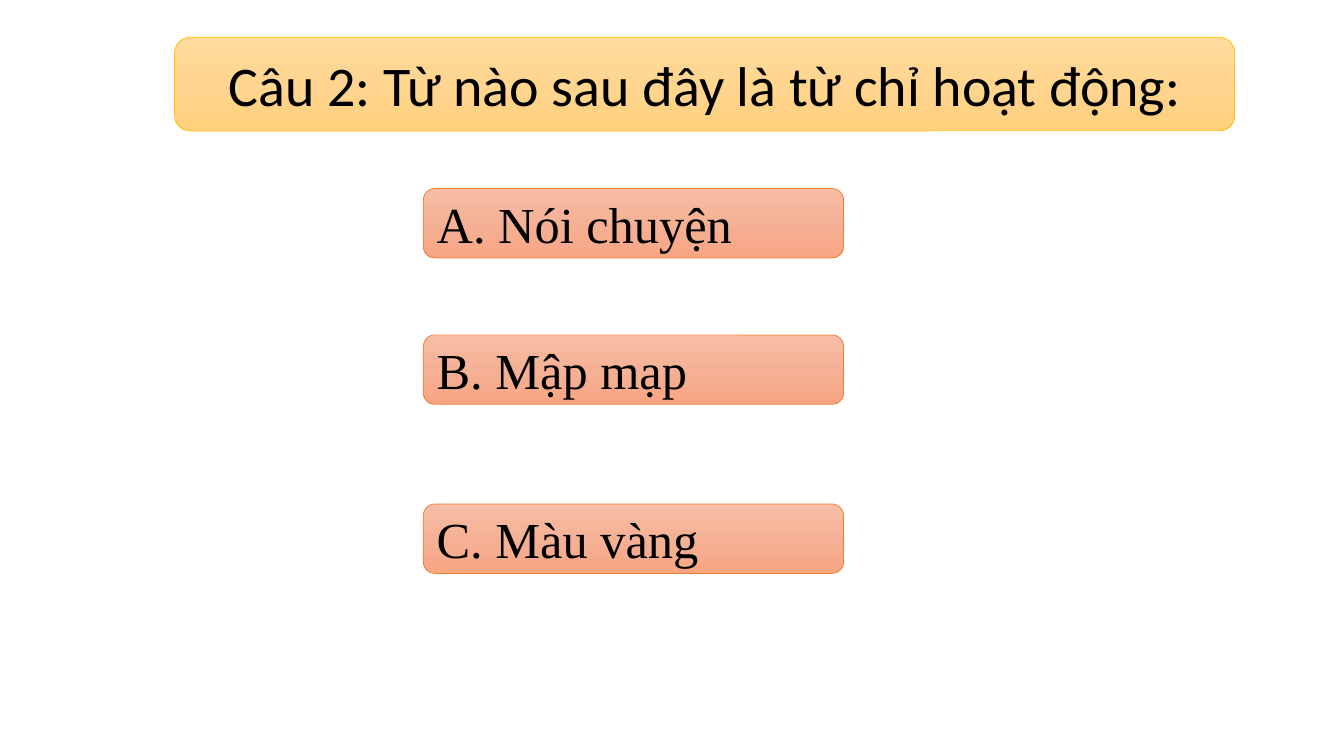
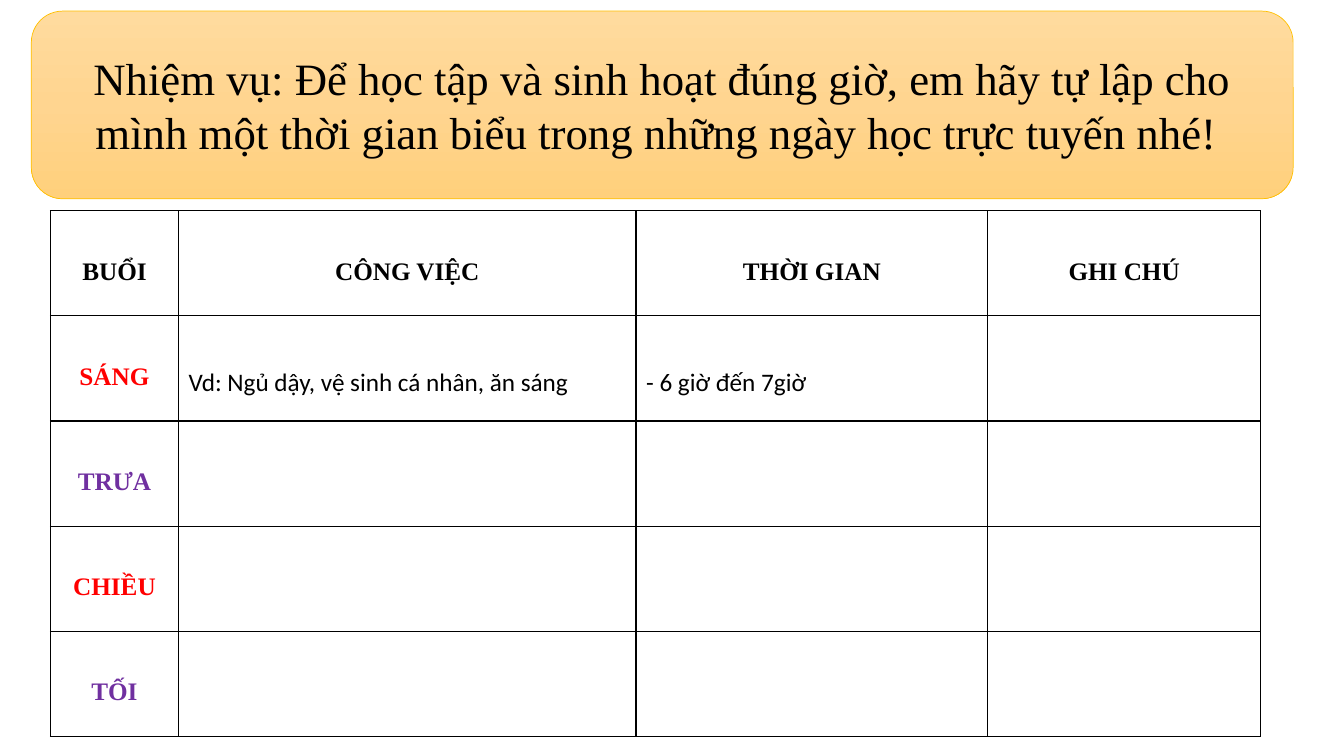
import copy

import pptx
import pptx.dml.color
import pptx.enum.shapes
import pptx.enum.text
import pptx.oxml
import pptx.oxml.ns
import pptx.util

Cm = pptx.util.Cm
Pt = pptx.util.Pt
ALIGN = pptx.enum.text.PP_ALIGN
SANS, SERIF = "Calibri", "Times New Roman"
BLACK, RED, PURPLE = "000000", "FF0000", "7030A0"
GOLD = (("FFDB9E", "FFD590", "FFD07C"), "FFC000")
CORAL = (("F7BDA5", "F5B196", "F8A582"), "ED7D31")


def tint(code):
    return pptx.dml.color.RGBColor.from_string(code)


class Deck:
    """Holds the style and the current slide of a quiz deck."""

    def __init__(self):
        self.file = pptx.Presentation()
        self.file.slide_width = Cm(33.87)
        self.file.slide_height = Cm(19.05)
        self.slide = None

    def page(self):
        self.slide = self.file.slides.add_slide(self.file.slide_layouts[6])

    def label(self, para, text, size, face, color=BLACK, bold=False, align=ALIGN.LEFT):
        para.alignment = align
        run = para.add_run()
        run.text = text
        font = run.font
        font.size, font.name, font.bold = Pt(size), face, bold
        font.color.rgb = tint(color)

    def shade(self, shape, colors):
        shape.fill.gradient()
        shape.fill.gradient_angle = 270
        stops = shape.element.spPr.find(".//" + pptx.oxml.ns.qn("a:gsLst"))
        stops.append(copy.deepcopy(stops[-1]))
        for rank, (stop, color) in enumerate(zip(shape.fill.gradient_stops, colors)):
            stop.position = rank / 2
            stop.color.rgb = tint(color)

    def panel(self, left, top, width, height, look, text, size, face, align):
        shape = self.slide.shapes.add_shape(
            pptx.enum.shapes.MSO_SHAPE.ROUNDED_RECTANGLE,
            Cm(left), Cm(top), Cm(width), Cm(height))
        shape.shadow.inherit = False
        colors, edge = look
        self.shade(shape, colors)
        shape.line.color.rgb = tint(edge)
        shape.line.width = Pt(0.5)
        frame = shape.text_frame
        frame.word_wrap = True
        frame.vertical_anchor = pptx.enum.text.MSO_ANCHOR.MIDDLE
        self.label(frame.paragraphs[0], text, size, face, align=align)

    def title(self, left, top, width, height, text, size, face):
        self.panel(left, top, width, height, GOLD, text, size, face, ALIGN.CENTER)

    def answer(self, top, text):
        self.panel(10.67, top, 10.59, 1.75, CORAL, text, 36, SERIF, ALIGN.LEFT)

    def border(self, cell):
        props = cell._tc.get_or_add_tcPr()
        for side in "LRTB":
            props.append(pptx.oxml.parse_xml(
                f'<a:ln{side} {pptx.oxml.ns.nsdecls("a")} w="{Pt(1)}"><a:solidFill>'
                f'<a:srgbClr val="{BLACK}"/></a:solidFill></a:ln{side}>'))
        cell.fill.background()

    def table(self, left, top, widths, height, rows, colors):
        grid = self.slide.shapes.add_table(
            len(rows), len(widths), Cm(left), Cm(top),
            Cm(sum(widths)), Cm(height * len(rows))).table
        grid.first_row = grid.horz_banding = False
        for col, width in zip(grid.columns, widths):
            col.width = Cm(width)
        for y, (row, color) in enumerate(zip(rows, colors)):
            grid.rows[y].height = Cm(height)
            for x in range(len(widths)):
                cell = grid.cell(y, x)
                self.border(cell)
                if x >= len(row):
                    continue
                para = cell.text_frame.paragraphs[0]
                para.line_spacing = 2.5
                if y == 0 or x == 0:
                    self.label(para, row[x], 18, SERIF, color, True, ALIGN.CENTER)
                else:
                    self.label(para, row[x], 18, SANS)


def main():
    deck = Deck()

    deck.page()
    deck.title(4.4, 0.94, 26.72, 2.36,
               "Câu 2: Từ nào sau đây là từ chỉ hoạt động:", 40, SANS)
    for top, text in ((4.75, "A. Nói chuyện"), (8.44, "B. Mập mạp"),
                      (12.7, "C. Màu vàng")):
        deck.answer(top, text)

    deck.page()
    deck.title(0.79, 0.28, 31.8, 4.73,
               "Nhiệm vụ: Để học tập và sinh hoạt đúng giờ, em hãy tự lập cho "
               "mình một thời gian biểu trong những ngày học trực tuyến nhé! ",
               32, SERIF)
    rows = (
        ("BUỔI", "CÔNG VIỆC", "THỜI GIAN", "GHI CHÚ"),
        ("SÁNG", "Vd: Ngủ dậy, vệ sinh cá nhân, ăn sáng", "- 6 giờ đến 7giờ"),
        ("TRƯA",),
        ("CHIỀU",),
        ("TỐI",),
    )
    deck.table(1.27, 5.31, (3.23, 11.53, 8.86, 6.88), 2.65, rows,
               (BLACK, RED, PURPLE, RED, PURPLE))

    deck.file.save("out.pptx")


if __name__ == "__main__":
    main()
